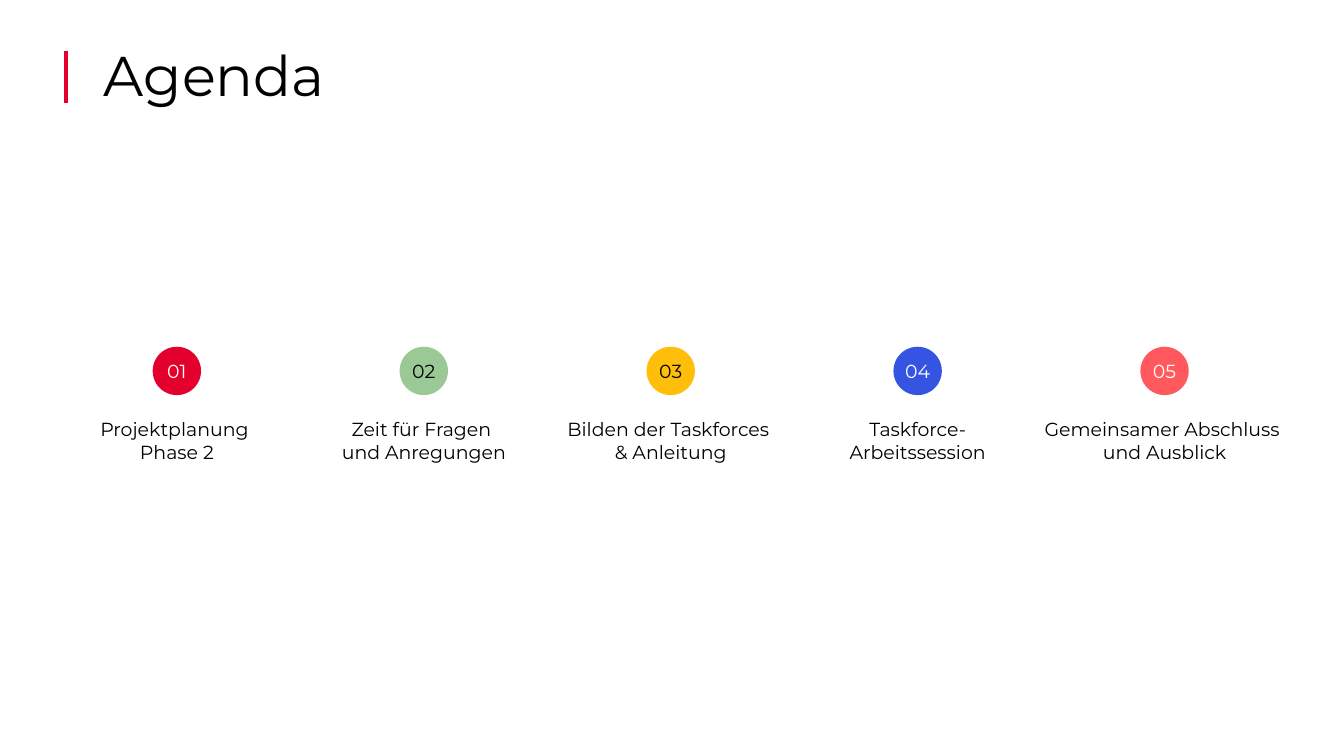
"""Build the agenda slide with five numbered steps."""
from dataclasses import dataclass

from lxml import etree
from pptx import Presentation
from pptx.dml.color import RGBColor
from pptx.enum.shapes import MSO_CONNECTOR, MSO_SHAPE
from pptx.enum.text import MSO_ANCHOR, MSO_AUTO_SIZE, PP_ALIGN
from pptx.oxml.ns import qn
from pptx.slide import Slide
from pptx.text.text import TextFrame
from pptx.util import Inches, Pt

STRAIGHT = MSO_CONNECTOR.STRAIGHT
OVAL = MSO_SHAPE.OVAL
TOP, MIDDLE = MSO_ANCHOR.TOP, MSO_ANCHOR.MIDDLE
NO_FIT, GROW = MSO_AUTO_SIZE.NONE, MSO_AUTO_SIZE.SHAPE_TO_FIT_TEXT
LEFT, CENTER = PP_ALIGN.LEFT, PP_ALIGN.CENTER

BLACK = RGBColor(0x00, 0x00, 0x00)
WHITE = RGBColor(0xFF, 0xFF, 0xFF)
RED = RGBColor(0xE4, 0x00, 0x2C)
GREEN = RGBColor(0x9B, 0xC9, 0x95)
YELLOW = RGBColor(0xFF, 0xBE, 0x0A)
BLUE = RGBColor(0x34, 0x54, 0xE1)
CORAL = RGBColor(0xFF, 0x59, 0x5E)

FONT = "Montserrat"
TITLE_SIZE, STEP_SIZE = 80, 27
FIRST_CENTER, STEP_PITCH = 3.51, 4.9
CIRCLE_TOP, CIRCLE_SIZE = 6.88, 0.96
LABEL_TOP, LABEL_WIDTH, LABEL_HEIGHT = 8.23, 5.5, 1.02
FRAME_FORMAT = {
    "margin_left": Inches(0.06),
    "margin_right": Inches(0.06),
    "margin_top": Inches(0.06),
    "margin_bottom": Inches(0.06),
    "word_wrap": True,
}


@dataclass(frozen=True)
class Step:
    label: str
    fill: RGBColor
    number_color: RGBColor


STEPS = [
    Step("Projektplanung \vPhase 2", RED, WHITE),
    Step("Zeit für Fragen \vund Anregungen", GREEN, BLACK),
    Step("Bilden der Taskforces \v& Anleitung", YELLOW, BLACK),
    Step("Taskforce-\vArbeitssession", BLUE, WHITE),
    Step("Gemeinsamer Abschluss \vund Ausblick", CORAL, WHITE),
]


def write(frame: TextFrame, text: str, size: float, color: RGBColor,
          align: PP_ALIGN, anchor: MSO_ANCHOR, fit: MSO_AUTO_SIZE) -> None:
    frame.text = text
    frame_format = FRAME_FORMAT | {"vertical_anchor": anchor, "auto_size": fit}
    for attribute, value in frame_format.items():
        setattr(frame, attribute, value)
    paragraph = frame.paragraphs[0]
    paragraph.alignment = align
    for run in paragraph.runs:
        for attribute, value in {"name": FONT, "size": Pt(size)}.items():
            setattr(run.font, attribute, value)
        run.font.color.rgb = color


def add_heading(slide: Slide, text: str) -> None:
    heading = slide.shapes.title
    place = {"left": 2, "top": 0.74, "width": 22.66, "height": 1.59}
    for attribute, length in place.items():
        setattr(heading, attribute, Inches(length))
    write(heading.text_frame, text, TITLE_SIZE, BLACK, LEFT, TOP, NO_FIT)


def add_accent(slide: Slide) -> None:
    accent = slide.shapes.add_connector(
        STRAIGHT, Inches(1.31), Inches(2.05), Inches(1.31), Inches(1.02))
    accent.line.color.rgb = RED
    accent.line.width = Pt(5)
    etree.SubElement(accent.line._get_or_add_ln().getparent(), qn("a:effectLst"))


def add_step(slide: Slide, index: int, step: Step) -> None:
    center = FIRST_CENTER + index * STEP_PITCH
    circle = slide.shapes.add_shape(
        OVAL, Inches(center - CIRCLE_SIZE / 2), Inches(CIRCLE_TOP),
        Inches(CIRCLE_SIZE), Inches(CIRCLE_SIZE))
    circle.shadow.inherit = False
    circle.fill.solid()
    circle.fill.fore_color.rgb = step.fill
    circle.line.fill.background()
    write(circle.text_frame, f"{index + 1:02}", STEP_SIZE, step.number_color,
          CENTER, MIDDLE, NO_FIT)
    label = slide.shapes.add_textbox(
        Inches(center - LABEL_WIDTH / 2), Inches(LABEL_TOP),
        Inches(LABEL_WIDTH), Inches(LABEL_HEIGHT))
    write(label.text_frame, step.label, STEP_SIZE, BLACK, CENTER, TOP, GROW)


def main() -> None:
    presentation = Presentation()
    presentation.slide_width = Inches(26.67)
    presentation.slide_height = Inches(15)
    slide = presentation.slides.add_slide(
        presentation.slide_layouts.get_by_name("Title Only"))
    add_accent(slide)
    add_heading(slide, "Agenda")
    for index, step in enumerate(STEPS):
        add_step(slide, index, step)
    presentation.save("out.pptx")


if __name__ == "__main__":
    main()
